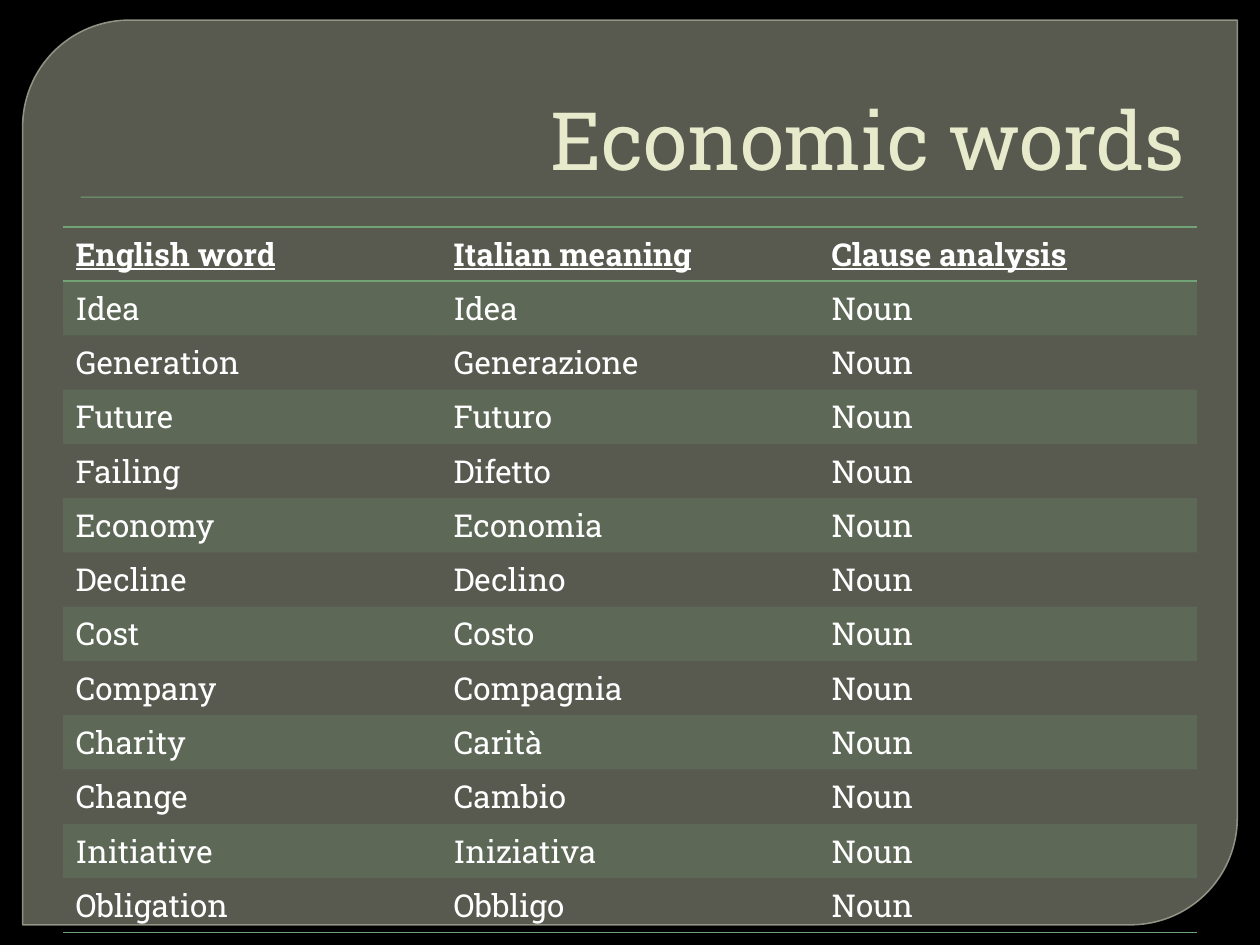
from lxml import etree
from pptx import Presentation
from pptx.dml.color import RGBColor
from pptx.enum.shapes import MSO_SHAPE
from pptx.enum.text import MSO_ANCHOR, MSO_AUTO_SIZE, PP_ALIGN
from pptx.oxml.ns import qn
from pptx.util import Inches, Pt

DIAG = MSO_SHAPE.ROUND_2_DIAG_RECTANGLE
RECT = MSO_SHAPE.RECTANGLE
BOTTOM = MSO_ANCHOR.BOTTOM
RIGHT = PP_ALIGN.RIGHT
FIXED = MSO_AUTO_SIZE.NONE

BLACK = RGBColor(0x00, 0x00, 0x00)
WHITE = RGBColor(0xFF, 0xFF, 0xFF)
STONE = RGBColor(0x88, 0x8B, 0x7B)
EDGE = RGBColor(0x9D, 0xA0, 0x90)
GREEN = RGBColor(0x72, 0xA3, 0x76)
CREAM = RGBColor(0xE7, 0xEA, 0xCB)

FONT = "Roboto Slab"
PLAIN = "{2D5ABB26-0587-4C30-8999-92F81FD0307C}"
HEAD = ("English word", "Italian meaning", "Clause analysis")
WORDS = (
    ("Idea", "Idea"),
    ("Generation", "Generazione"),
    ("Future", "Futuro"),
    ("Failing", "Difetto"),
    ("Economy", "Economia"),
    ("Decline", "Declino"),
    ("Cost", "Costo"),
    ("Company", "Compagnia"),
    ("Charity", "Carità"),
    ("Change", "Cambio"),
    ("Initiative", "Iniziativa"),
    ("Obligation", "Obbligo"),
)


def set_box(left, top, width, height):
    """Return a box in slide units from lengths in inches."""
    return Inches(left), Inches(top), Inches(width), Inches(height)


def fade(part, percent):
    """Set the opacity of the solid colour inside an XML element."""
    color = next(part.iter(qn("a:srgbClr")))
    etree.SubElement(color, qn("a:alpha"), val=str(percent * 1000))


def add_run(para, text, size, color, strong=False):
    """Add one styled run, bold and underlined when strong."""
    run = para.add_run()
    run.text = text
    font = run.font
    font.name, font.size = FONT, Pt(size)
    font.color.rgb = color
    font.bold = font.underline = strong


def add_shape(slide, kind, box, color):
    """Add a filled preset shape without shadow or line."""
    shape = slide.shapes.add_shape(kind, *box)
    shape.shadow.inherit = False
    shape.fill.solid()
    shape.fill.fore_color.rgb = color
    shape.line.fill.background()
    return shape


def add_panel(slide, box):
    """Add the translucent panel with two round corners."""
    panel = add_shape(slide, DIAG, box, STONE)
    panel.adjustments[0] = 0.118
    panel.adjustments[1] = 0
    fade(panel.element.spPr, 65)
    panel.line.color.rgb = EDGE
    panel.line.width = Pt(0.87)
    fade(panel.element.spPr.find(qn("a:ln")), 88)


def add_title(slide, box, rule):
    """Fill the title and stack it above the rule."""
    title = slide.shapes.title
    title.left, title.top, title.width, title.height = box
    frame = title.text_frame
    frame.word_wrap = True
    frame.auto_size = FIXED
    frame.vertical_anchor = BOTTOM
    para = frame.paragraphs[0]
    para.alignment = RIGHT
    add_run(para, "Economic words", 46, CREAM)
    rule.element.addnext(title.element)


def add_edge(cell, side):
    """Draw a thin green border on one side of a cell."""
    props = cell._tc.get_or_add_tcPr()
    line = etree.SubElement(props, qn(f"a:{side}"), w=str(Pt(1)))
    fill = etree.SubElement(line, qn("a:solidFill"))
    etree.SubElement(fill, qn("a:srgbClr"), val=str(GREEN))


def add_words(slide, box):
    """Add the word table with shaded odd rows and ruled edges."""
    rows = [HEAD] + [(*pair, "Noun") for pair in WORDS]
    last = len(rows) - 1
    frame = slide.shapes.add_table(len(rows), len(HEAD), *box)
    next(frame.element.iter(qn("a:tableStyleId"))).text = PLAIN
    table = frame.table
    table.horz_banding = False
    for r, row in enumerate(rows):
        table.rows[r].height = Inches(0.43)
        for c, text in enumerate(row):
            cell = table.cell(r, c)
            add_run(cell.text_frame.paragraphs[0], text, 18, WHITE, r == 0)
            if r == 0:
                add_edge(cell, "lnT")
            if r in (0, last):
                add_edge(cell, "lnB")
            if r % 2:
                cell.fill.solid()
                cell.fill.fore_color.rgb = GREEN
                fade(cell._tc.tcPr.find(qn("a:solidFill")), 20)
            else:
                cell.fill.background()


def main():
    """Build and save the slide."""
    deck = Presentation()
    deck.slide_width, deck.slide_height = Inches(10), Inches(7.5)
    slide = deck.slides.add_slide(deck.slide_layouts[5])
    slide.background.fill.solid()
    slide.background.fill.fore_color.rgb = BLACK
    add_panel(slide, set_box(0.18, 0.16, 9.64, 7.18))
    rule = add_shape(slide, RECT, set_box(0.64, 1.56, 8.75, 0.01), GREEN)
    add_title(slide, set_box(0.5, 0.28, 9, 1.25), rule)
    add_words(slide, set_box(0.5, 1.8, 9, 5.59))
    deck.save("out.pptx")


if __name__ == "__main__":
    main()
